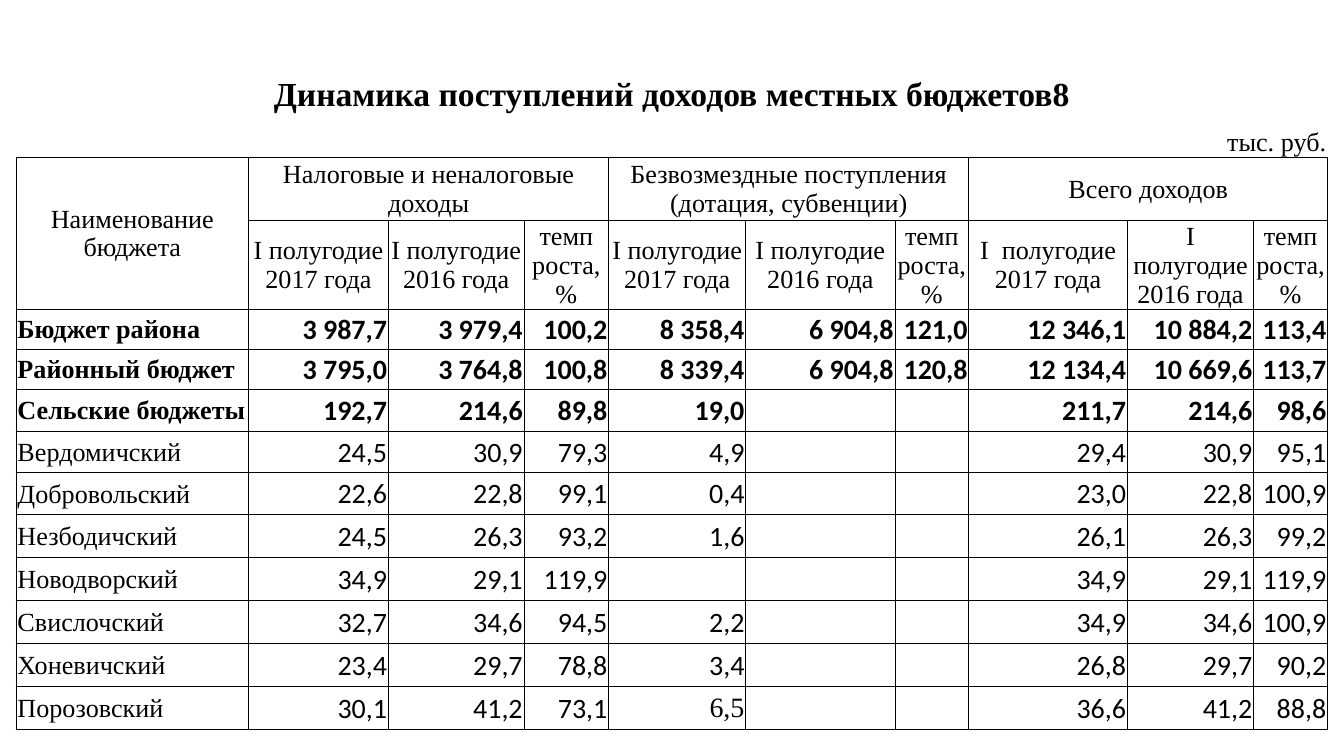
from lxml.etree import SubElement
from pptx import Presentation
from pptx.dml.color import RGBColor
from pptx.enum.text import MSO_ANCHOR, PP_ALIGN
from pptx.oxml.ns import qn
from pptx.util import Inches, Pt

COLORS = {"ink": "000000"}
SERIF, SANS = "Times New Roman", "Calibri"
PLAIN = "{2D5ABB26-0587-4C30-8999-92F81FD0307C}"  # no style, no grid
LEFT, MID, RIGHT = PP_ALIGN.LEFT, PP_ALIGN.CENTER, PP_ALIGN.RIGHT

WIDTHS = [1.73, 1.04, 0.74, 0.27, 0.63, 0.89, 0.13,
          1.11, 0.55, 0.89, 0.29, 0.6, 0.34, 0.55]
HEIGHTS = [0.32, 0.32, 0.47, 0.66] + [0.3] * 2 + [0.31] * 3 + [0.32] * 5

# First and last grid column of each cell, by kind of row
UNITS = [(0, 0), (1, 2), (3, 5), (6, 8), (9, 9), (10, 11), (12, 13)]
GROUPS = [(1, 4), (5, 8), (9, 13)]
FIELDS = [(1, 1), (2, 3), (4, 4), (5, 6), (7, 7), (8, 8),
          (9, 10), (11, 12), (13, 13)]

TITLES = ["Налоговые и неналоговые доходы",
          "Безвозмездные поступления (дотация, субвенции)",
          "Всего доходов"]
OLD, RATE = "I полугодие\n2016 года", "темп\nроста, %"
HEADS = ["I полугодие 2017 года", OLD, RATE,
         "I полугодие 2017 года", OLD, RATE,
         "I  полугодие\n2017 года", OLD, RATE]
BUDGETS = [
    ("Бюджет района", "3 987,7", "3 979,4", "100,2", "8 358,4", "6 904,8",
     "121,0", "12 346,1", "10 884,2", "113,4"),
    ("Районный бюджет", "3 795,0", "3 764,8", "100,8", "8 339,4", "6 904,8",
     "120,8", "12 134,4", "10 669,6", "113,7"),
    ("Сельские бюджеты", "192,7", "214,6", "89,8", "19,0", "", "",
     "211,7", "214,6", "98,6"),
    ("Вердомичский", "24,5", "30,9", "79,3", "4,9", "", "",
     "29,4", "30,9", "95,1"),
    ("Добровольский", "22,6", "22,8", "99,1", "0,4", "", "",
     "23,0", "22,8", "100,9"),
    ("Незбодичский", "24,5", "26,3", "93,2", "1,6", "", "",
     "26,1", "26,3", "99,2"),
    ("Новодворский", "34,9", "29,1", "119,9", "", "", "",
     "34,9", "29,1", "119,9"),
    ("Свислочский", "32,7", "34,6", "94,5", "2,2", "", "",
     "34,9", "34,6", "100,9"),
    ("Хоневичский", "23,4", "29,7", "78,8", "3,4", "", "",
     "26,8", "29,7", "90,2"),
    ("Порозовский", "30,1", "41,2", "73,1", "6,5", "", "",
     "36,6", "41,2", "88,8"),
]
TOTALS = 3


class Deck:
    def __init__(self, width, height):
        self.prs = Presentation()
        self.prs.slide_width = Inches(width)
        self.prs.slide_height = Inches(height)
        self.slide = self.prs.slides.add_slide(self.prs.slide_layouts[6])

    def grid(self, left, top, widths, heights):
        frame = self.slide.shapes.add_table(
            len(heights), len(widths), Inches(left), Inches(top),
            Inches(sum(widths)), Inches(sum(heights)))
        self.table = frame.table
        self.table.first_row = self.table.horz_banding = False
        self.table._tbl.tblPr.find(qn("a:tableStyleId")).text = PLAIN
        for col, width in zip(self.table.columns, widths):
            col.width = Inches(width)
        for row, height in zip(self.table.rows, heights):
            row.height = Inches(height)

    def cell(self, row, cols, text="", align=MID, size=14, font=SERIF,
             bold=False, anchor=MSO_ANCHOR.MIDDLE, last=None):
        """Fill the cell over cols (first, last), down to row last if given."""
        cell = self.table.cell(row, cols[0])
        if cols[0] != cols[1] or last:
            cell.merge(self.table.cell(last or row, cols[1]))
        cell.margin_left = cell.margin_right = cell.margin_top = Inches(0.01)
        cell.margin_bottom = 0
        cell.vertical_anchor = anchor
        cell.fill.background()
        cell.text = text
        for par in cell.text_frame.paragraphs:
            par.alignment = align
            par.font.size = Pt(size)
            par.font.name = font
            par.font.bold = bold
            par.font.color.rgb = RGBColor.from_string(COLORS["ink"])

    def edges(self, row, sides):
        """Draw thin lines on the given sides (of L, R, T, B) along a row."""
        for cell in self.table.rows[row].cells:
            props = cell._tc.get_or_add_tcPr()
            for spot, side in enumerate(sides):
                line = SubElement(props, qn(f"a:ln{side}"), w=str(Pt(0.5)))
                fill = SubElement(line, qn("a:solidFill"))
                SubElement(fill, qn("a:srgbClr"), val=COLORS["ink"])
                props.insert(spot, line)


def main():
    deck = Deck(10, 10 * 9 / 16)
    deck.grid(0.12, 0.53, WIDTHS, HEIGHTS)

    deck.cell(0, (0, 13), "Динамика поступлений доходов местных бюджетов8",
              size=18, bold=True, anchor=MSO_ANCHOR.BOTTOM)
    for cols in UNITS[:-1]:
        deck.cell(1, cols)
    deck.cell(1, UNITS[-1], "тыс. руб.", RIGHT, anchor=MSO_ANCHOR.BOTTOM)

    deck.cell(2, (0, 0), "Наименование бюджета", last=3)
    for cols, text in zip(GROUPS, TITLES):
        deck.cell(2, cols, text)
    for cols, text in zip(FIELDS, HEADS):
        deck.cell(3, cols, text)

    for num, (name, *vals) in enumerate(BUDGETS):
        row, bold = num + 4, num < TOTALS
        deck.cell(row, (0, 0), name, LEFT, bold=bold)
        for cols, val in zip(FIELDS, vals):
            font = SERIF if val == "6,5" else SANS
            deck.cell(row, cols, val, RIGHT, 15, font, bold)

    deck.edges(1, "B")
    for row in range(2, len(HEIGHTS)):
        deck.edges(row, "LRTB")
    deck.prs.save("out.pptx")


if __name__ == "__main__":
    main()
